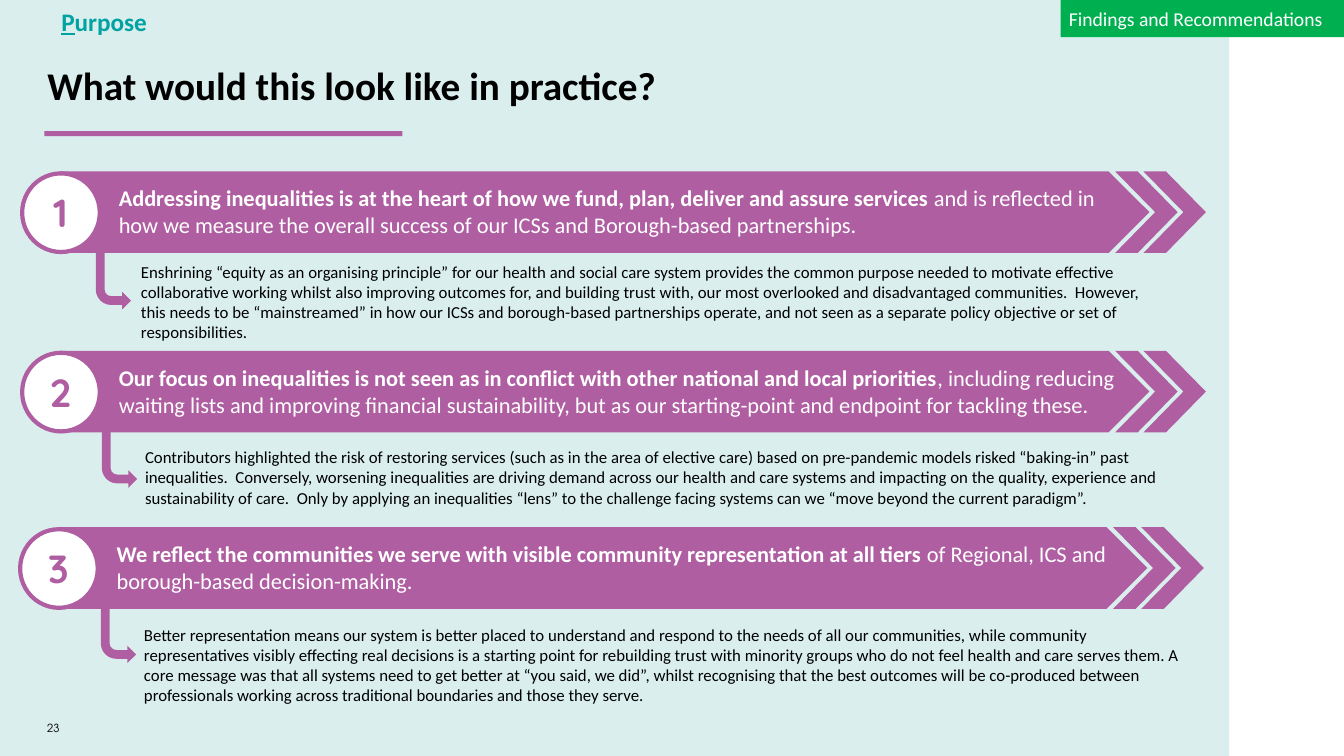
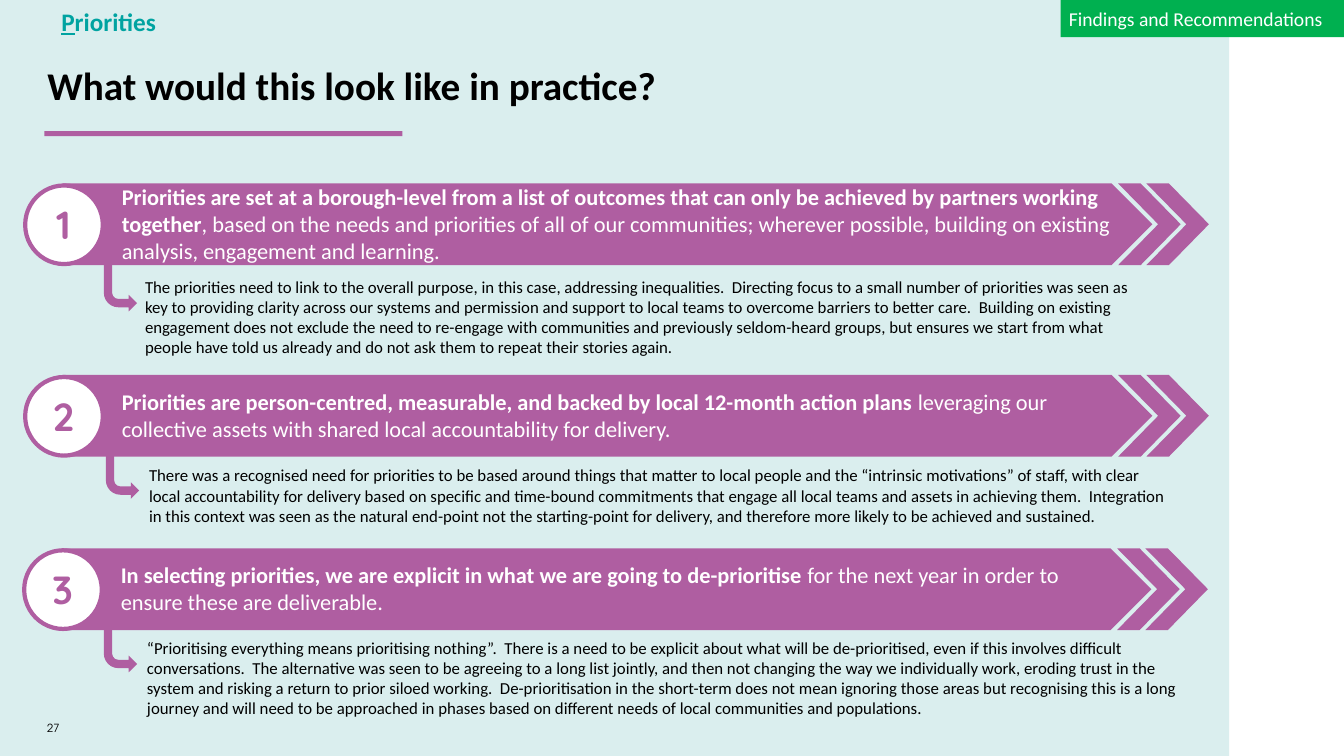
from dataclasses import dataclass

from pptx import Presentation
from pptx.dml.color import RGBColor
from pptx.enum.shapes import MSO_SHAPE
from pptx.enum.text import MSO_ANCHOR, MSO_AUTO_SIZE, PP_ALIGN
from pptx.util import Inches, Pt

RECTANGLE = MSO_SHAPE.RECTANGLE
PENTAGON = MSO_SHAPE.PENTAGON
CHEVRON = MSO_SHAPE.CHEVRON
OVAL = MSO_SHAPE.OVAL
BENT_ARROW = MSO_SHAPE.BENT_ARROW
TOP, MIDDLE = MSO_ANCHOR.TOP, MSO_ANCHOR.MIDDLE
LEFT, CENTER = PP_ALIGN.LEFT, PP_ALIGN.CENTER
GROW, FIXED = MSO_AUTO_SIZE.SHAPE_TO_FIT_TEXT, MSO_AUTO_SIZE.NONE
TITLE_ONLY = 5


@dataclass(frozen=True)
class Theme:
    purple: str = "AF5EA1"
    panel: str = "DAEEEE"
    green: str = "00B050"
    teal: str = "00A3A1"
    white: str = "FFFFFF"
    black: str = "000000"
    body_font: str = "Calibri"
    number_font: str = "Quicksand"
    page_font: str = "TeX Gyre Adventor"
    title_size: int = 28
    section_size: int = 18
    heading_size: int = 16
    tag_size: int = 14
    detail_size: int = 12
    page_size: int = 8


THEME = Theme()

# Geometry shared by all banners, in inches
BANNER_WIDTH, BANNER_HEIGHT = 10.81, 0.81
CHEVRON_WIDTH, CHEVRON_OFFSETS = 0.62, (10.47, 10.75)
CIRCLE_WIDTH, CIRCLE_HEIGHT = 0.77, 0.78


@dataclass(frozen=True)
class Point:
    left: float
    top: float
    strong: str
    rest: str
    detail: str
    detail_box: tuple
    arrow_box: tuple
    heading_width: float = 10.04


PURPOSE = [
    Point(
        0.59, 1.7,
        "Addressing inequalities is at the heart of how we fund, plan, deliver and assure services ",
        "and is reflected in how we measure the overall success of our ICSs and Borough-based "
        "partnerships.",
        "Enshrining “equity as an organising principle” for our health and social care system "
        "provides the common purpose needed to motivate effective collaborative working whilst "
        "also improving outcomes for, and building trust with, our most overlooked and "
        "disadvantaged communities.  However, this needs to be “mainstreamed” in how our ICSs and "
        "borough-based partnerships operate, and not seen as a separate policy objective or set "
        "of responsibilities.",
        (1.3, 2.54, 10.36, 0.91), (0.95, 2.36, 0.35, 0.71)),
    Point(
        0.59, 3.48,
        "Our focus on inequalities is not seen as in conflict with other national and local "
        "priorities",
        ", including reducing waiting lists and improving financial sustainability, but as our "
        "starting-point and endpoint for tackling these.",
        "Contributors highlighted the risk of restoring services (such as in the area of elective "
        "care) based on pre-pandemic models risked “baking-in” past inequalities.  Conversely, "
        "worsening inequalities are driving demand across our health and care systems and "
        "impacting on the quality, experience and sustainability of care.  Only by applying an "
        "inequalities “lens” to the challenge facing systems can we “move beyond the current "
        "paradigm”.",
        (1.34, 4.38, 10.53, 0.71), (1.01, 4.13, 0.35, 0.71), heading_width=10.15),
    Point(
        0.57, 5.23,
        "We reflect the communities we serve with visible community representation at all tiers ",
        "of Regional, ICS and borough-based decision-making.",
        "Better representation means our system is better placed to understand and respond to the "
        "needs of all our communities, while community representatives visibly effecting real "
        "decisions is a starting point for rebuilding trust with minority groups who do not feel "
        "health and care serves them. A core message was that all systems need to get better at "
        "“you said, we did”, whilst recognising that the best outcomes will be co-produced "
        "between professionals working across traditional boundaries and those they serve.",
        (1.33, 6.14, 10.53, 0.91), (1, 5.87, 0.35, 0.71)),
]

PRIORITIES = [
    Point(
        0.62, 1.82,
        "Priorities are set at a borough-level from a list of outcomes that can only be achieved "
        "by partners working together",
        ", based on the needs and priorities of all of our communities; wherever possible, "
        "building on existing analysis, engagement and learning.",
        "The priorities need to link to the overall purpose, in this case, addressing "
        "inequalities.  Directing focus to a small number of priorities was seen as key to "
        "providing clarity across our systems and permission and support to local teams to "
        "overcome barriers to better care.  Building on existing engagement does not exclude the "
        "need to re-engage with communities and previously seldom-heard groups, but ensures we "
        "start from what people have told us already and do not ask them to repeat their stories "
        "again.",
        (1.34, 2.69, 10.07, 0.91), (1.03, 2.62, 0.33, 0.47)),
    Point(
        0.62, 3.72,
        "Priorities are person-centred, measurable, and backed by local 12-month action plans ",
        "leveraging our collective assets with shared local accountability for delivery.",
        "There was a recognised need for priorities to be based around things that matter to "
        "local people and the “intrinsic motivations” of staff, with clear local accountability "
        "for delivery based on specific and time-bound commitments that engage all local teams "
        "and assets in achieving them.  Integration in this context was seen as the natural "
        "end-point not the starting-point for delivery, and therefore more likely to be achieved "
        "and sustained.",
        (1.38, 4.56, 10.3, 0.71), (1.05, 4.48, 0.33, 0.47)),
    Point(
        0.61, 5.44,
        "In selecting priorities, we are explicit in what we are going to de-prioritise ",
        "for the next year in order to ensure these are deliverable.",
        "“Prioritising everything means prioritising nothing”.  There is a need to be explicit "
        "about what will be de-prioritised, even if this involves difficult conversations.  The "
        "alternative was seen to be agreeing to a long list jointly, and then not changing the "
        "way we individually work, eroding trust in the system and risking a return to prior "
        "siloed working.  De-prioritisation in the short-term does not mean ignoring those areas "
        "but recognising this is a long journey and will need to be approached in phases based on "
        "different needs of local communities and populations.",
        (1.36, 6.27, 10.53, 0.91), (1.03, 6.2, 0.33, 0.47)),
]


# Basic elements
def place(shape, box):
    shape.left, shape.top, shape.width, shape.height = map(Inches, box)


def add_shape(slide, kind, box, fill, outline=None):
    shape = slide.shapes.add_shape(kind, *map(Inches, box))
    shape.shadow.inherit = False
    shape.fill.solid()
    shape.fill.fore_color.rgb = RGBColor.from_string(fill)
    if outline:
        shape.line.color.rgb = RGBColor.from_string(outline)
        shape.line.width = Pt(3)
    else:
        shape.line.fill.background()
    return shape


def write(shape, runs, size, color=THEME.black, font=THEME.body_font, bold=False,
          align=LEFT, anchor=MIDDLE, fit=GROW):
    """Write runs, each a text or a (text, font attributes) pair, as one paragraph."""
    frame = shape.text_frame
    frame.word_wrap = True
    frame.auto_size = fit
    frame.vertical_anchor = anchor
    paragraph = frame.paragraphs[0]
    paragraph.alignment = align
    for item in runs:
        text, changes = (item, {}) if isinstance(item, str) else item
        run = paragraph.add_run()
        run.text = text
        run.font.name = font
        run.font.size = Pt(size)
        run.font.bold = bold
        run.font.color.rgb = RGBColor.from_string(color)
        for name, value in changes.items():
            setattr(run.font, name, value)
    return paragraph


def add_text(slide, box, runs, size, **formatting):
    text_box = slide.shapes.add_textbox(*map(Inches, box))
    write(text_box, runs, size, **formatting)


# Parts every slide has
def move_to_layout(shape, layout):
    layout.shapes._spTree.append(shape._element)


def add_backdrop(slide):
    panel = add_shape(slide, RECTANGLE, (0, 0, 12.19, 7.5), THEME.panel)
    title_rule = add_shape(slide, RECTANGLE, (0.44, 1.3, 3.55, 0.05), THEME.purple)
    for shape in (panel, title_rule):
        move_to_layout(shape, slide.slide_layout)


def add_frame(slide, section, page):
    title = slide.shapes.title
    place(title, (0.37, 0.47, 11.57, 0.81))
    paragraph = write(title, ["What would this look like in practice?"], THEME.title_size,
                      bold=True, fit=FIXED)
    paragraph.line_spacing = 0.9
    paragraph.space_after = Pt(12)

    add_text(slide, (0.51, 0.01, 6.67, 0.4),
             [(section[0], {"underline": True}), section[1:]],
             THEME.section_size, color=THEME.teal, bold=True, anchor=TOP)

    tag = add_shape(slide, RECTANGLE, (10.52, 0, 2.82, 0.37), THEME.green)
    tag.text_frame.margin_left = tag.text_frame.margin_right = Inches(0.08)
    write(tag, ["Findings and Recommendations"], THEME.tag_size, color=THEME.white, fit=FIXED)

    add_text(slide, (0.37, 7.13, 0.51, 0.19), [page], THEME.page_size,
             font=THEME.page_font, fit=FIXED)


# Numbered banner with its explanation
def add_point(slide, number, point):
    left, top = point.left, point.top
    add_shape(slide, PENTAGON, (left, top, BANNER_WIDTH, BANNER_HEIGHT), THEME.purple)
    for offset in CHEVRON_OFFSETS:
        chevron = add_shape(slide, CHEVRON, (left + offset, top, CHEVRON_WIDTH, BANNER_HEIGHT),
                            THEME.purple)
        chevron.adjustments[0] = 0.64
    add_text(slide, (left + 0.49, top, point.heading_width, BANNER_HEIGHT - 0.02),
             [point.strong, (point.rest, {"bold": False})],
             THEME.heading_size, color=THEME.white, bold=True, fit=FIXED)

    circle_left, circle_top = left - 0.37, top + 0.02
    add_shape(slide, OVAL, (circle_left, circle_top, CIRCLE_WIDTH, CIRCLE_HEIGHT),
              THEME.white, outline=THEME.purple)
    add_text(slide, (circle_left + 0.11, circle_top + 0.1, 0.54, 0.57), [str(number)],
             THEME.title_size, color=THEME.purple, font=THEME.number_font, bold=True,
             align=CENTER, anchor=TOP)

    arrow = add_shape(slide, BENT_ARROW, point.arrow_box, THEME.purple)
    arrow._element.spPr.xfrm.set("flipV", "1")
    add_text(slide, point.detail_box, [point.detail], THEME.detail_size)


def main():
    presentation = Presentation()
    presentation.slide_width = Inches(13.33)
    presentation.slide_height = Inches(7.5)
    layout = presentation.slide_layouts[TITLE_ONLY]
    pages = [("Purpose", "23", PURPOSE), ("Priorities", "27", PRIORITIES)]
    for index, (section, page, points) in enumerate(pages):
        slide = presentation.slides.add_slide(layout)
        if index == 0:
            add_backdrop(slide)
        add_frame(slide, section, page)
        for number, point in enumerate(points, start=1):
            add_point(slide, number, point)
    presentation.save("out.pptx")


if __name__ == "__main__":
    main()
